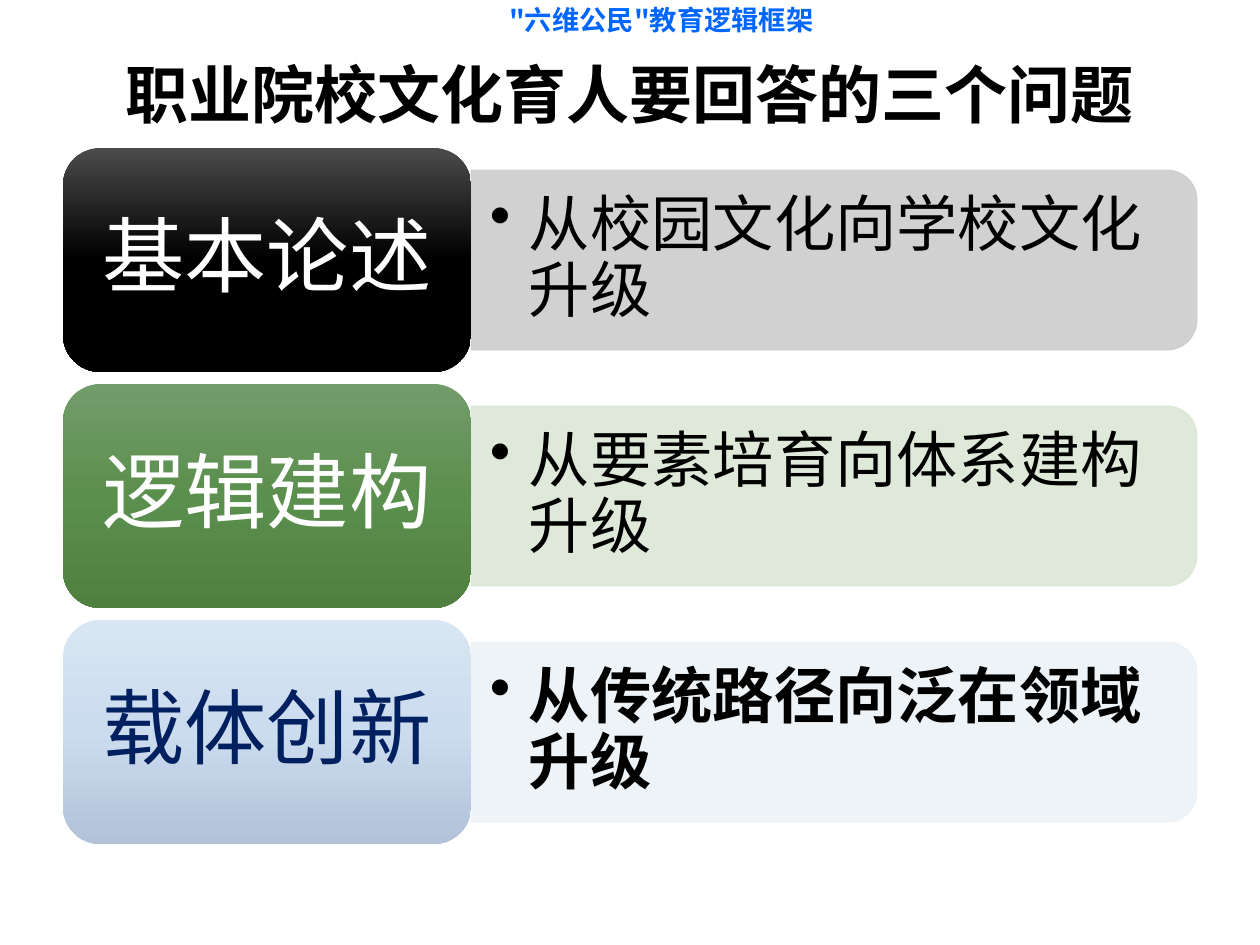
from copy import deepcopy

from pptx import Presentation
from pptx.dml.color import RGBColor
from pptx.enum.shapes import MSO_SHAPE
from pptx.enum.text import MSO_ANCHOR, PP_ALIGN
from pptx.oxml.ns import qn
from pptx.util import Pt
from lxml import etree

PX = 914400 / 126
FONT = "Noto Sans CJK SC"
CENTER, LEFT = PP_ALIGN.CENTER, PP_ALIGN.LEFT
MIDDLE = MSO_ANCHOR.MIDDLE
ROUND, ROUND_TOP = MSO_SHAPE.ROUNDED_RECTANGLE, MSO_SHAPE.ROUND_2_SAME_RECTANGLE


def px(*values):
    return [round(v * PX) for v in values]


def write(s, text, size, color, bold=False, align=CENTER, spacing=1.0, inset=(13, 6)):
    tf = s.text_frame
    tf.word_wrap = True
    tf.vertical_anchor = MIDDLE
    tf.margin_left, tf.margin_top = tf.margin_right, tf.margin_bottom = px(*inset)
    p = tf.paragraphs[0]
    p.alignment = align
    p.line_spacing = spacing
    r = p.add_run()
    r.text = text
    r.font.size = Pt(size)
    r.font.bold = bold
    r.font.name = FONT
    r.font.color.rgb = RGBColor.from_string(color)
    etree.SubElement(r.font._element, qn("a:ea"), typeface=FONT)
    return p


prs = Presentation()
prs.slide_width, prs.slide_height = px(1260, 945)
slide = prs.slides.add_slide(prs.slide_layouts[6])
shapes = slide.shapes

# Header and title
s = shapes.add_textbox(*px(126, 2, 1071, 42))
write(s, '"六维公民"教育逻辑框架', 15.6, "0066FF", True, spacing=0.8)
s = shapes.add_textbox(*px(63, 38, 1134, 110))
write(s, "职业院校文化育人要回答的三个问题", 36, "000000", True)

# Three rows: label tile on the left, answer bar on the right
rows = [
    ("基本论述", "FFFFFF", ("4B4B4B", "000000", "000000"),
     "从校园文化向学校文化升级", "CCCCCC", False),
    ("逻辑建构", "FFFFFF", ("739C6B", "5B8F4D", "50803F"),
     "从要素培育向体系建构升级", "DBE7D6", False),
    ("载体创新", "002060", ("D8E6F3", "CCDCEF", "B1C2D9"),
     "从传统路径向泛在领域升级", "EDF2F7", True),
]
TOP, STEP = 148, 236
TILE_X, TILE_W, TILE_H = 63, 408, 224
BAR_W, BAR_H = 726, 180
BAR_X = TILE_X + TILE_W

for i, (label, label_color, stops, answer, bar_color, bold) in enumerate(rows):
    y = TOP + i * STEP
    mid = y + TILE_H // 2

    # Answer bar, turned so that its rounded end faces right
    s = shapes.add_shape(ROUND_TOP, *px(BAR_X + (BAR_W - BAR_H) // 2,
                                        mid - BAR_W // 2, BAR_H, BAR_W))
    s.rotation = 90
    s.shadow.inherit = False
    s.line.width = Pt(0.5)
    for fill in (s.fill, s.line.fill):
        fill.solid()
        fill.fore_color.rgb = RGBColor.from_string(bar_color)
    for clr in s._element.spPr.iter(qn("a:srgbClr")):
        etree.SubElement(clr, qn("a:alpha"), val="90000")

    # Bulleted answer
    s = shapes.add_textbox(*px(BAR_X, mid - 81, BAR_W - 9, 162))
    p = write(s, answer, 35, "000000", bold, LEFT, 0.9, (19, 9))
    pPr = p._p.get_or_add_pPr()
    indent = px(39)[0]
    pPr.set("marL", str(indent))
    pPr.set("indent", str(-indent))
    etree.SubElement(pPr, qn("a:buChar"), char="•")

    # Label tile with a three-stop vertical gradient
    s = shapes.add_shape(ROUND, *px(TILE_X, y, TILE_W, TILE_H))
    s.shadow.inherit = False
    s.line.fill.background()
    s.fill.gradient()
    s.fill.gradient_angle = 270
    gs = s._element.spPr.find(".//" + qn("a:gs"))
    gs.addnext(deepcopy(gs))
    for j, (stop, color) in enumerate(zip(s.fill.gradient_stops, stops)):
        stop.position = j / 2
        stop.color.rgb = RGBColor.from_string(color)
    write(s, label, 47, label_color, spacing=0.9, inset=(25, 13))

prs.save("out.pptx")
